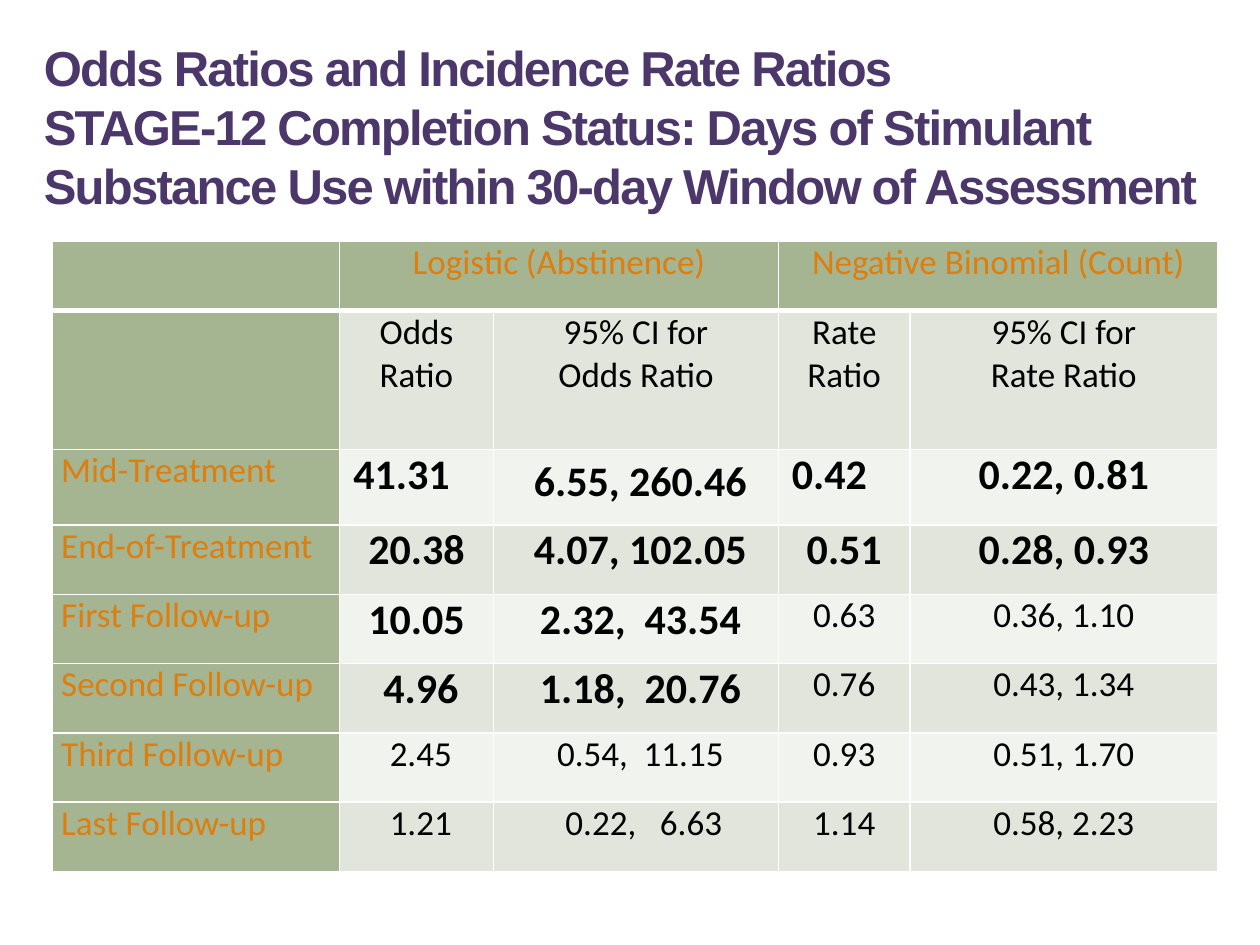
import lxml.etree
import pptx
import pptx.dml.color
import pptx.enum.text
import pptx.oxml.ns
import pptx.util

Pt = pptx.util.Pt
ALIGN = pptx.enum.text.PP_ALIGN
COLORS = {
    "title": "4C376B", "label": "DD7E0E", "text": "000000", "border": "FFFFFF",
    "header": "A5B592", "light": "F0F3EE", "dark": "E1E5DC",
}
TITLE_LINES = [
    "Odds Ratios and Incidence Rate Ratios ",
    "STAGE-12 Completion Status: Days of Stimulant "
    "Substance Use within 30-day Window of Assessment",
]
COLUMN_WIDTHS = [164, 88, 163, 75, 176]
ROW_HEIGHTS = [39.6, 79.2, 43.2] + [39.6] * 5
GROUPS = {1: "Logistic (Abstinence)", 3: "Negative Binomial (Count)"}
SUBHEADINGS = [
    ["Odds Ratio"], ["95% CI for", "Odds Ratio"],
    ["Rate Ratio"], ["95% CI for", "Rate Ratio"],
]
# Each row: label, number of significant (bold) values, values
RESULTS = [
    ("Mid-Treatment", 4, ["41.31", "6.55, 260.46", "0.42", "0.22, 0.81"]),
    ("End-of-Treatment", 4, ["20.38", "4.07, 102.05", "0.51", "0.28, 0.93"]),
    ("First Follow-up", 2, ["10.05", "2.32,  43.54", "0.63", "0.36, 1.10"]),
    ("Second Follow-up", 2, ["4.96", "1.18,  20.76", "0.76", "0.43, 1.34"]),
    ("Third Follow-up", 0, ["2.45", "0.54,  11.15", "0.93", "0.51, 1.70"]),
    ("Last Follow-up", 0, ["1.21", "0.22,   6.63", "1.14", "0.58, 2.23"]),
]
# Extra left (positive) or right (negative) inset, by table row and column
INSETS = {(2, 1): -17, (2, 3): -17, (5, 1): 5, (6, 1): 5, (7, 1): 5, (7, 2): 9}
INTERVAL_INSET = 5


class SlideBuilder:
    table_font = "Calibri"
    title_font = "Arial"
    cell_margin = 5

    def __init__(self, presentation):
        self.slide = presentation.slides.add_slide(presentation.slide_layouts[6])

    def color(self, name):
        return pptx.dml.color.RGBColor.from_string(COLORS[name])

    def add_run(self, paragraph, text, font, size, color, bold=False):
        run = paragraph.add_run()
        run.text = text
        run.font.name = font
        run.font.size = Pt(size)
        run.font.bold = bold
        run.font.color.rgb = self.color(color)
        return run

    def add_title(self, lines, left, top, width, height):
        frame = self.slide.shapes.add_textbox(
            Pt(left), Pt(top), Pt(width), Pt(height)).text_frame
        frame.word_wrap = True
        frame.vertical_anchor = pptx.enum.text.MSO_ANCHOR.BOTTOM
        paragraph = frame.paragraphs[0]
        for index, line in enumerate(lines):
            if index:
                paragraph.add_line_break()
            run = self.add_run(paragraph, line, self.title_font, 28, "title", True)
            run.font._element.set("spc", "-100")

    def add_table(self, left, top, widths, heights):
        table = self.slide.shapes.add_table(
            len(heights), len(widths), Pt(left), Pt(top),
            Pt(sum(widths)), Pt(sum(heights))).table
        for column, width in zip(table.columns, widths):
            column.width = Pt(width)
        for row, height in zip(table.rows, heights):
            row.height = Pt(height)
        return table

    def style_cell(self, cell, fill, bottom_width=1):
        properties = cell._tc.get_or_add_tcPr()
        for side in "LRTB":
            line = lxml.etree.SubElement(properties, pptx.oxml.ns.qn(f"a:ln{side}"))
            line.set("w", str(Pt(bottom_width if side == "B" else 1)))
            solid = lxml.etree.SubElement(line, pptx.oxml.ns.qn("a:solidFill"))
            lxml.etree.SubElement(
                solid, pptx.oxml.ns.qn("a:srgbClr"), val=COLORS["border"])
        cell.fill.solid()
        cell.fill.fore_color.rgb = self.color(fill)
        cell.margin_left = cell.margin_right = Pt(self.cell_margin)
        cell.margin_top = cell.margin_bottom = 0

    def write_cell(self, cell, lines, color="text", bold=False,
                   align=ALIGN.CENTER, inset=0):
        cell.margin_left = Pt(self.cell_margin + max(inset, 0))
        cell.margin_right = Pt(self.cell_margin + max(-inset, 0))
        frame = cell.text_frame
        for index, line in enumerate(lines):
            paragraph = frame.add_paragraph() if index else frame.paragraphs[0]
            paragraph.alignment = align
            self.add_run(paragraph, line, self.table_font,
                         24 if bold else 20, color, bold)


def fill_table(builder, table):
    for row in range(len(ROW_HEIGHTS)):
        for column in range(len(COLUMN_WIDTHS)):
            if row == 0 or column == 0:
                fill = "header"
            else:
                fill = "dark" if row % 2 else "light"
            builder.style_cell(table.cell(row, column), fill, 1 if row else 3)

    for column, heading in GROUPS.items():
        table.cell(0, column).merge(table.cell(0, column + 1))
        builder.write_cell(table.cell(0, column), [heading], "label")
    for column, lines in enumerate(SUBHEADINGS, 1):
        builder.write_cell(table.cell(1, column), lines)

    for row, (label, bold_count, values) in enumerate(RESULTS, 2):
        builder.write_cell(table.cell(row, 0), [label], "label", align=ALIGN.LEFT)
        for column, value in enumerate(values, 1):
            default = INTERVAL_INSET if column == 2 else 0
            builder.write_cell(table.cell(row, column), [value],
                               bold=column <= bold_count,
                               inset=INSETS.get((row, column), default))
    table.cell(2, 2).text_frame.paragraphs[0].line_spacing = 1.15


def main():
    presentation = pptx.Presentation()
    presentation.slide_width, presentation.slide_height = Pt(720), Pt(540)
    builder = SlideBuilder(presentation)
    builder.add_title(TITLE_LINES, 18, 36, 690, 90)
    table = builder.add_table(30, 138, COLUMN_WIDTHS, ROW_HEIGHTS)
    fill_table(builder, table)
    presentation.save("out.pptx")


if __name__ == "__main__":
    main()
